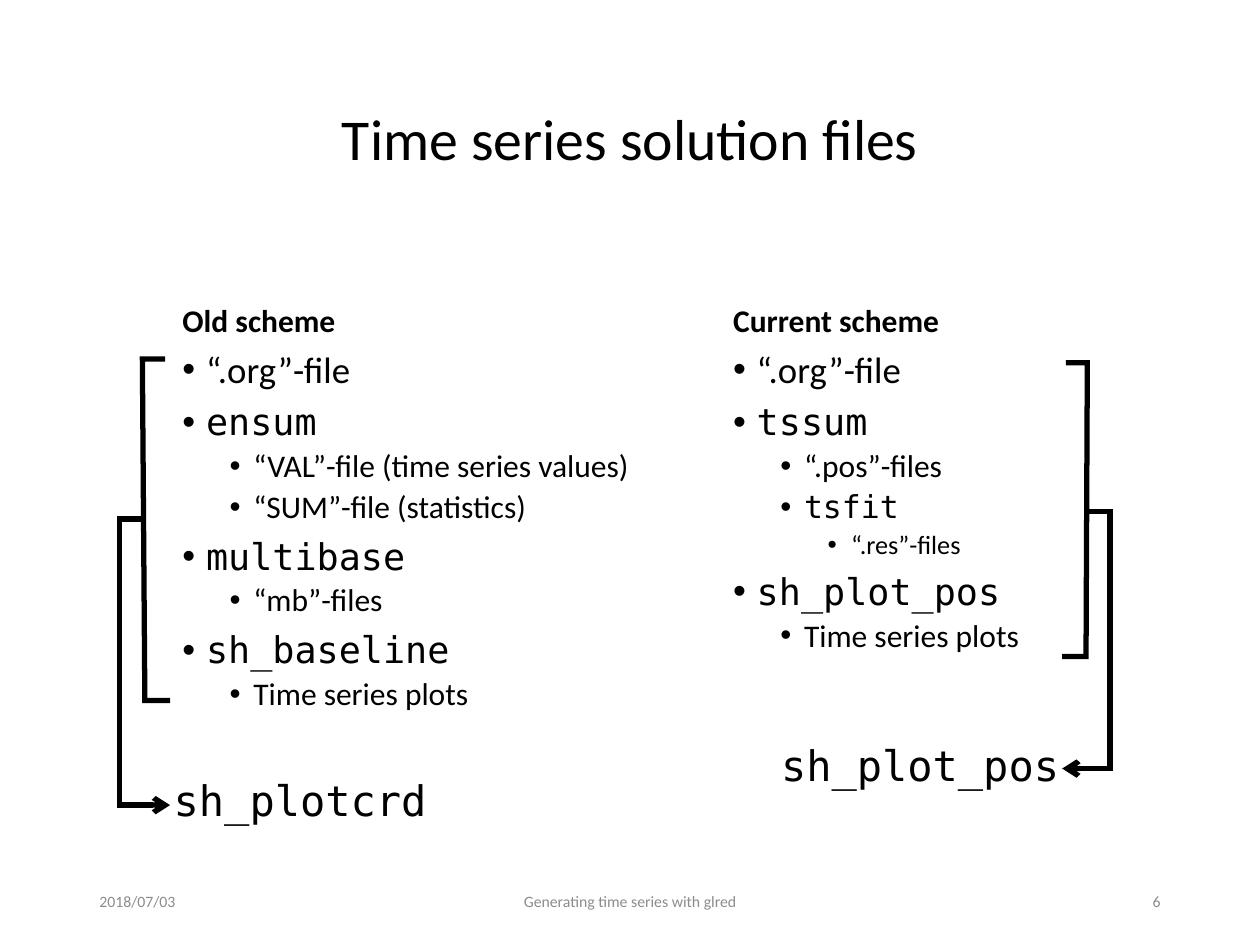
from dataclasses import dataclass

from lxml import etree
from pptx import Presentation
from pptx.dml.color import RGBColor
from pptx.enum.text import MSO_ANCHOR, MSO_AUTO_SIZE, PP_ALIGN
from pptx.oxml.ns import qn
from pptx.util import Pt

PX = 9144  # EMU per px, 100 px to the inch
LEFT, CENTER, RIGHT = PP_ALIGN.LEFT, PP_ALIGN.CENTER, PP_ALIGN.RIGHT
TOP, MIDDLE, BOTTOM = MSO_ANCHOR.TOP, MSO_ANCHOR.MIDDLE, MSO_ANCHOR.BOTTOM
FIT_TEXT = MSO_AUTO_SIZE.SHAPE_TO_FIT_TEXT


@dataclass(frozen=True)
class Theme:
    ink: RGBColor = RGBColor(0x00, 0x00, 0x00)
    muted: RGBColor = RGBColor(0x8C, 0x8C, 0x8C)
    sans: str = "Calibri"
    mono: str = "DejaVu Sans Mono"
    title: int = 33
    heading: int = 18
    levels: tuple[int, ...] = (21, 18, 15)
    level_gaps: tuple[float, ...] = (7.5, 3.8, 3.8)
    command: int = 24
    footer: int = 9
    stroke: int = 3
    line_spacing: float = 0.9


THEME = Theme()


@dataclass(frozen=True)
class Label:
    text: str
    left: int
    top: int
    width: int
    height: int
    size: int
    align: PP_ALIGN = LEFT
    anchor: MSO_ANCHOR = MIDDLE
    font: str = THEME.sans
    color: RGBColor = THEME.ink
    bold: bool = False
    wrap: bool = True
    spacing: float = 1.0


@dataclass(frozen=True)
class Item:
    text: str
    level: int = 0
    font: str = THEME.sans


@dataclass(frozen=True)
class Scheme:
    heading: str
    left: int
    width: int
    items: tuple[Item, ...]


@dataclass(frozen=True)
class Outline:
    points: tuple[tuple[int, int], ...]
    arrow: bool = False


SCHEMES = (
    Scheme("Old scheme", 135, 423, (
        Item("“.org”-file"),
        Item("ensum", font=THEME.mono),
        Item("“VAL”-file (time series values)", 1),
        Item("“SUM”-file (statistics)", 1),
        Item("multibase", font=THEME.mono),
        Item("“mb”-files", 1),
        Item("sh_baseline", font=THEME.mono),
        Item("Time series plots", 1),
    )),
    Scheme("Current scheme", 572, 425, (
        Item("“.org”-file"),
        Item("tssum", font=THEME.mono),
        Item("“.pos”-files", 1),
        Item("tsfit", 1, THEME.mono),
        Item("“.res”-files", 2),
        Item("sh_plot_pos", font=THEME.mono),
        Item("Time series plots", 1),
    )),
)

LABELS = (
    Label("Time series solution files", 69, 40, 862, 145, THEME.title, CENTER,
          spacing=THEME.line_spacing),
    Label("2018/07/03", 69, 695, 225, 40, THEME.footer, color=THEME.muted),
    Label("Generating time series with glred", 331, 695, 338, 40, THEME.footer, CENTER,
          color=THEME.muted),
    Label("6", 706, 695, 225, 40, THEME.footer, RIGHT, color=THEME.muted),
    Label("sh_plotcrd", 128, 610, 222, 50, THEME.command, anchor=TOP,
          font=THEME.mono, wrap=False),
    Label("sh_plot_pos", 610, 582, 242, 50, THEME.command, anchor=TOP,
          font=THEME.mono, wrap=False),
)

OUTLINES = (
    Outline(((131, 285), (113, 285), (115, 556), (135, 556))),
    Outline(((114, 412), (95, 412), (95, 639), (135, 639)), arrow=True),
    Outline(((846, 288), (863, 288), (862, 521), (843, 521))),
    Outline(((863, 406), (881, 406), (881, 610), (843, 610)), arrow=True),
)


def add_box(page, left: int, top: int, width: int, height: int):
    box = page.shapes.add_textbox(left * PX, top * PX, width * PX, height * PX)
    box.text_frame.word_wrap = True
    return box


def add_span(para, text: str, font: str, size: int, color: RGBColor, bold: bool = False) -> None:
    span = para.add_run()
    span.text = text
    span.font.name = font
    span.font.size = Pt(size)
    span.font.color.rgb = color
    span.font.bold = bold


def add_label(page, label: Label) -> None:
    frame = add_box(page, label.left, label.top, label.width, label.height).text_frame
    frame.word_wrap = label.wrap
    frame.vertical_anchor = label.anchor
    if not label.wrap:
        frame.auto_size = FIT_TEXT
    para = frame.paragraphs[0]
    para.alignment = label.align
    para.line_spacing = label.spacing
    add_span(para, label.text, label.font, label.size, label.color, label.bold)


def set_bullet(para, level: int) -> None:
    """Hang a round bullet, each level 0.375 inch further in."""
    hang = Pt(13.5)
    properties = para._p.get_or_add_pPr()
    properties.set("marL", str(hang + level * Pt(27)))
    properties.set("indent", str(-hang))
    etree.SubElement(properties, qn("a:buFont"), typeface="Arial")
    etree.SubElement(properties, qn("a:buChar"), char="•")


def add_scheme(page, scheme: Scheme) -> None:
    add_label(page, Label(scheme.heading, scheme.left, 184, scheme.width, 90, THEME.heading,
                          anchor=BOTTOM, bold=True, spacing=THEME.line_spacing))
    frame = add_box(page, scheme.left, 274, scheme.width, 403).text_frame
    for index, item in enumerate(scheme.items):
        para = frame.add_paragraph() if index else frame.paragraphs[0]
        para.level = item.level
        para.line_spacing = THEME.line_spacing
        para.space_before = Pt(THEME.level_gaps[item.level])
        set_bullet(para, item.level)
        add_span(para, item.text, item.font, THEME.levels[item.level], THEME.ink)


def add_outline(page, outline: Outline) -> None:
    start, *others = outline.points
    builder = page.shapes.build_freeform(*start, scale=PX)
    builder.add_line_segments(others, close=False)
    shape = builder.convert_to_shape()
    shape.shadow.inherit = False
    shape.fill.background()
    shape.line.color.rgb = THEME.ink
    shape.line.width = Pt(THEME.stroke)
    stroke = shape.line._get_or_add_ln()
    etree.SubElement(stroke, qn("a:miter"), lim="800000")
    if outline.arrow:
        etree.SubElement(stroke, qn("a:tailEnd"), type="arrow")


def main() -> None:
    deck = Presentation()
    deck.slide_width, deck.slide_height = 1000 * PX, 750 * PX
    page = deck.slides.add_slide(deck.slide_layouts[6])
    for scheme in SCHEMES:
        add_scheme(page, scheme)
    for label in LABELS:
        add_label(page, label)
    for outline in OUTLINES:
        add_outline(page, outline)
    deck.save("out.pptx")


if __name__ == "__main__":
    main()
